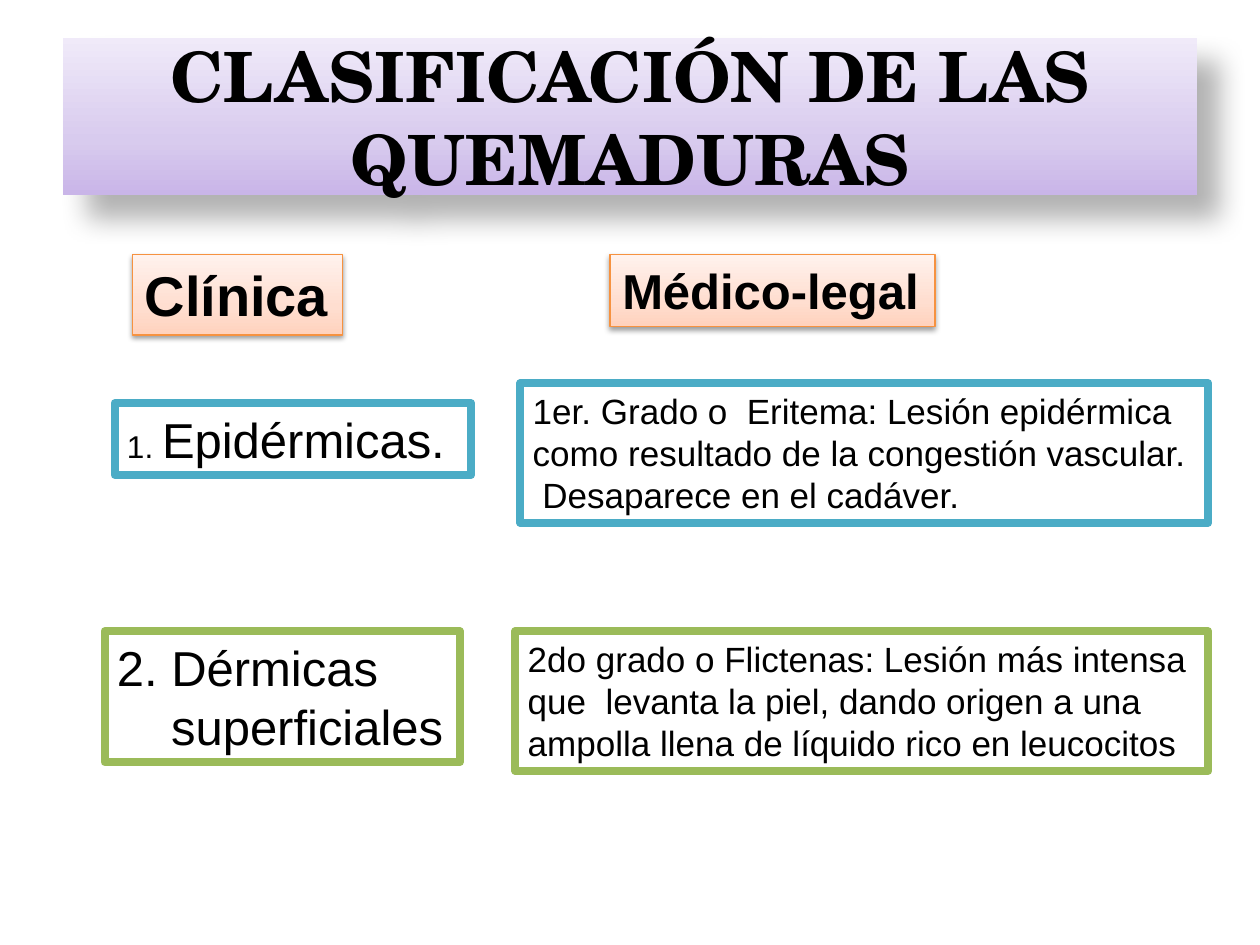
from dataclasses import dataclass

from lxml import etree
from pptx import Presentation
from pptx.dml.color import RGBColor
from pptx.enum.text import MSO_ANCHOR, MSO_AUTO_SIZE, PP_ALIGN
from pptx.oxml.ns import qn
from pptx.util import Inches, Pt

LEFT, CENTER = PP_ALIGN.LEFT, PP_ALIGN.CENTER
TOP, MIDDLE = MSO_ANCHOR.TOP, MSO_ANCHOR.MIDDLE
GROW, FIXED = MSO_AUTO_SIZE.SHAPE_TO_FIT_TEXT, MSO_AUTO_SIZE.NONE


@dataclass(frozen=True)
class Theme:
    sans: str = "Arial"
    serif: str = "TeX Gyre Schola"
    ink: str = "000000"
    paper: str = "FFFFFF"
    blue: str = "4BACC6"
    green: str = "9BBB59"
    orange: str = "F69240"
    violet: tuple = ("C9B5E8", "D8CBEE", "F0EAF9")
    peach: tuple = ("FFD2BD", "FFDED0", "FFF2ED")
    stops: tuple = (0, 35, 100)
    title: float = 39.6
    large: int = 32
    medium: int = 28
    body: int = 20
    small: int = 18
    thick: float = 4.5
    thin: float = 0.75


THEME = Theme()


def rgb(color):
    return RGBColor.from_string(color)


def write(shape, text, size=THEME.body, font=THEME.sans, bold=False,
          align=LEFT, anchor=TOP, wrap=False, fit=GROW, indents=()):
    frame = shape.text_frame
    frame.word_wrap = wrap
    frame.auto_size = fit
    frame.vertical_anchor = anchor
    for i, line in enumerate(text):
        para = frame.paragraphs[0] if i == 0 else frame.add_paragraph()
        para.alignment = align
        if i < len(indents):
            para._p.get_or_add_pPr().set("marL", str(Inches(indents[i])))
        parts = [(line, size)] if isinstance(line, str) else line
        for words, points in parts:
            run = para.add_run()
            run.text = words
            run.font.size = Pt(points)
            run.font.name = font
            run.font.bold = bold
            run.font.color.rgb = rgb(THEME.ink)


def place(shape, box):
    shape.left, shape.top, shape.width, shape.height = map(Inches, box)


def shade(shape, colors):
    shape.fill.gradient()
    shape.fill.gradient_angle = 90
    stops = shape._element.spPr.find(qn("a:gradFill")).find(qn("a:gsLst"))
    for stop in list(stops):
        stops.remove(stop)
    for pos, color in zip(THEME.stops, colors):
        stop = etree.SubElement(stops, qn("a:gs"), pos=str(pos * 1000))
        etree.SubElement(stop, qn("a:srgbClr"), val=color)


def cast(shape, alpha, blur, dist, angle):
    shape.shadow.inherit = False
    effects = shape._element.spPr.find(qn("a:effectLst"))
    outer = etree.SubElement(
        effects, qn("a:outerShdw"), blurRad=str(Pt(blur)), dist=str(Pt(dist)),
        dir=str(angle * 60000), algn="ctr", rotWithShape="0")
    color = etree.SubElement(outer, qn("a:srgbClr"), val=THEME.ink)
    etree.SubElement(color, qn("a:alpha"), val=str(alpha * 1000))


def edge(shape, color, width):
    shape.line.color.rgb = rgb(color)
    shape.line.width = Pt(width)


def banner(slide, box, text):
    title = slide.shapes.title
    place(title, box)
    shade(title, THEME.violet)
    cast(title, 30, 15, 18, 45)
    write(title, [text], size=THEME.title, font=THEME.serif, bold=True,
          align=CENTER, anchor=MIDDLE, wrap=True, fit=FIXED)


def label(slide, box, text, size):
    tag = slide.shapes.add_textbox(*map(Inches, box))
    shade(tag, THEME.peach)
    edge(tag, THEME.orange, THEME.thin)
    cast(tag, 38, 3.1, 1.6, 90)
    write(tag, [text], size=size, bold=True)


def card(slide, box, color, text, **style):
    panel = slide.shapes.add_textbox(*map(Inches, box))
    panel.fill.solid()
    panel.fill.fore_color.rgb = rgb(THEME.paper)
    edge(panel, color, THEME.thick)
    write(panel, text, **style)


def main():
    deck = Presentation()
    deck.slide_width, deck.slide_height = Inches(10), Inches(7.5)
    slide = deck.slides.add_slide(deck.slide_layouts[5])

    banner(slide, (0.5, 0.3, 9, 1.25), "CLASIFICACIÓN DE LAS QUEMADURAS")
    label(slide, (1.05, 2.02, 1.67, 0.64), "Clínica", THEME.large)
    label(slide, (4.84, 2.02, 2.58, 0.57), "Médico-legal", THEME.medium)

    card(slide, (0.91, 3.2, 2.83, 0.57), THEME.blue,
         [[("1. ", THEME.small), ("Epidérmicas.", THEME.medium),
           (" ", THEME.small)]])
    card(slide, (4.13, 3.04, 5.46, 1.11), THEME.blue,
         ["1er. Grado o  Eritema: Lesión epidérmica",
          "como resultado de la congestión vascular.",
          " Desaparece en el cadáver."])
    card(slide, (0.83, 5.01, 2.82, 1.04), THEME.green,
         ["2. Dérmicas", "superficiales"],
         size=THEME.medium, indents=(0, 0.43))
    card(slide, (4.09, 5.01, 5.5, 1.11), THEME.green,
         ["2do grado o Flictenas: Lesión más intensa",
          "que  levanta la piel, dando origen a una",
          "ampolla llena de líquido rico en leucocitos"], wrap=True)

    deck.save("out.pptx")


if __name__ == "__main__":
    main()
